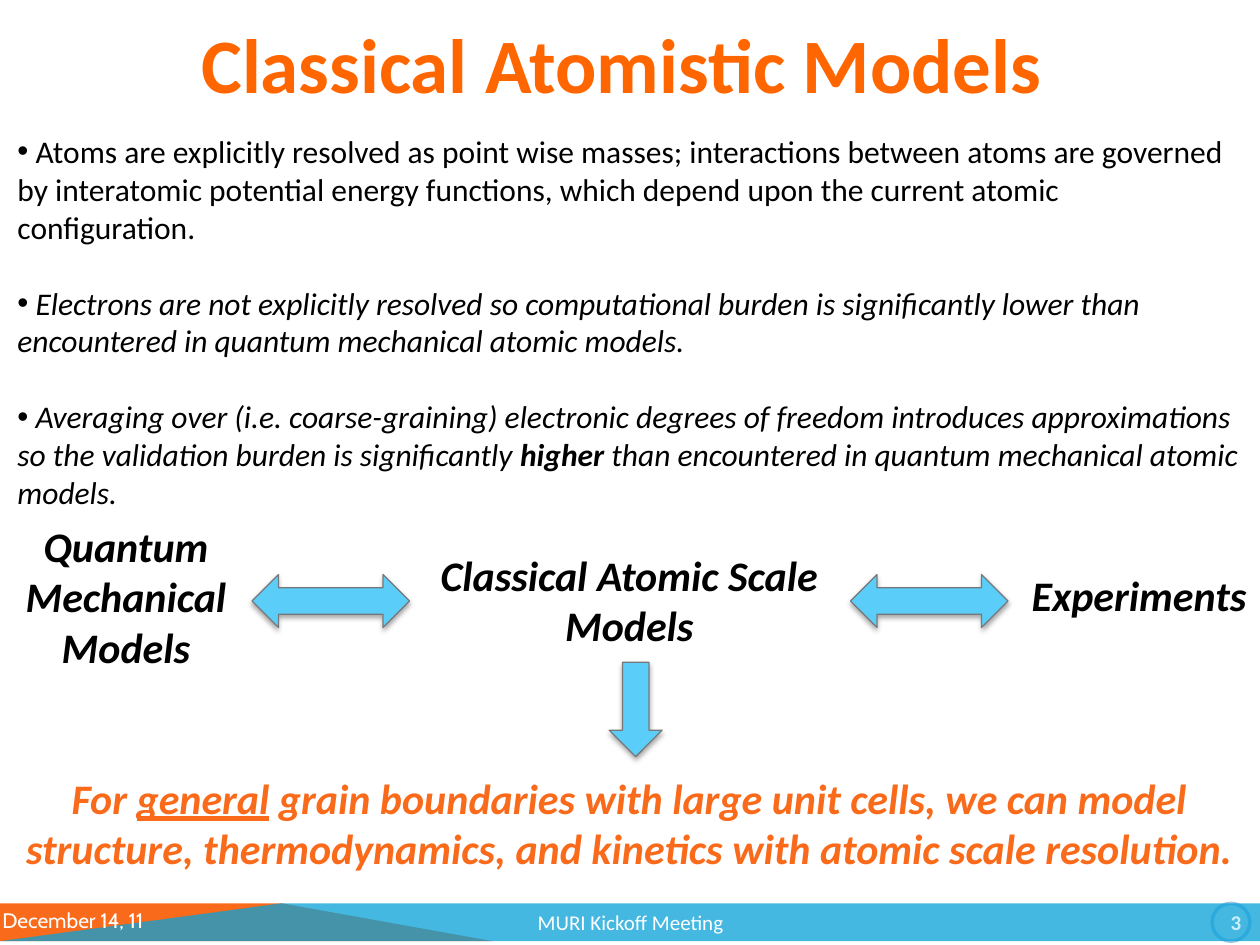
from lxml import etree
from pptx import Presentation
from pptx import util as u
from pptx.dml.color import RGBColor
from pptx.enum import shapes, text
from pptx.oxml import ns

ORANGE, CYAN, SKY, GREY = "F96A1B", "08A1D9", "5ACEF9", "76787B"
WHITE, BLACK = "FFFFFF", "000000"
LEFT, CENTER, RIGHT = (text.PP_ALIGN.LEFT, text.PP_ALIGN.CENTER,
                       text.PP_ALIGN.RIGHT)
LABEL = {"size": u.Pt(24), "bold": True, "italic": True}


def paint(color_format, color, alpha=None):
    """Set a solid fill from a hex string, with opacity in percent."""
    color_format.solid()
    color_format.fore_color.rgb = RGBColor.from_string(color)
    if alpha is not None:
        node = color_format.fore_color._xFill.find(ns.qn("a:srgbClr"))
        etree.SubElement(node, ns.qn("a:alpha"), val=str(alpha * 1000))


def add_shadow(effects, blur, distance, angle, alpha):
    shadow = etree.SubElement(
        effects, ns.qn("a:outerShdw"), blurRad=str(u.Pt(blur)),
        dist=str(u.Pt(distance)), dir=str(angle * 60000), rotWithShape="0")
    color = etree.SubElement(shadow, ns.qn("a:srgbClr"), val=BLACK)
    etree.SubElement(color, ns.qn("a:alpha"), val=str(alpha * 1000))


class Builder:
    def __init__(self, page, font="Calibri"):
        self.page = page
        self.font = font

    def band(self, points, color, alpha=None):
        """Footer polygon through points given in inches."""
        corners = [(u.Inches(x), u.Inches(y)) for x, y in points]
        outline = self.page.shapes.build_freeform(*corners[0])
        outline.add_line_segments(corners[1:], close=True)
        shape = outline.convert_to_shape()
        shape.shadow.inherit = False
        paint(shape.fill, color, alpha)
        shape.line.fill.background()

    def ring(self, place, color, width, alpha):
        shape = self.page.shapes.add_shape(
            shapes.MSO_SHAPE.OVAL, *map(u.Inches, place))
        shape.shadow.inherit = False
        shape.fill.background()
        paint(shape.line.fill, color, alpha)
        shape.line.width = u.Pt(width)

    def arrow(self, kind, place, rotation=0):
        shape = self.page.shapes.add_shape(kind, *map(u.Inches, place))
        shape.rotation = rotation
        shape.shadow.inherit = False
        paint(shape.fill, SKY)
        paint(shape.line.fill, GREY)
        shape.line.width = u.Pt(0.75)
        effects = shape._element.spPr.find(ns.qn("a:effectLst"))
        add_shadow(effects, 3.1, 1.8, 90, 35)

    def words(self, place, paras, style, color=BLACK, align=LEFT,
              anchor=text.MSO_ANCHOR.TOP, wrap=True, bullet=None, gap=0,
              shadow=False):
        """Text box; each para is a list of (wording, extra format) spans."""
        box = self.page.shapes.add_textbox(*map(u.Inches, place))
        frame = box.text_frame
        frame.word_wrap = wrap
        frame.vertical_anchor = anchor
        for index, spans in enumerate(paras):
            para = frame.paragraphs[0] if index == 0 else frame.add_paragraph()
            para.alignment = align
            if bullet:
                props = para._p.get_or_add_pPr()
                etree.SubElement(props, ns.qn("a:buFont"), typeface="Arial")
                etree.SubElement(props, ns.qn("a:buChar"), char=bullet)
            if index and gap:
                para.space_before = u.Pt(gap)
            for wording, extra in spans:
                span = para.add_run()
                span.text = wording
                values = {"name": self.font, **style, **extra}
                for name, value in values.items():
                    setattr(span.font, name, value)
                paint(span.font.fill, color)
                if shadow:
                    effects = etree.Element(ns.qn("a:effectLst"))
                    span._r.rPr.find(ns.qn("a:latin")).addprevious(effects)
                    add_shadow(effects, 4, 3, 45, 50)


def main():
    deck = Presentation()
    deck.slide_width, deck.slide_height = u.Inches(10), u.Inches(7.5)
    page = deck.slides.add_slide(deck.slide_layouts[6])
    build = Builder(page)

    # Footer bands
    top, bottom = 7.17, 7.47
    build.band([(0, bottom), (0, top), (2.24, top), (3.91, bottom)], ORANGE)
    build.ring((9.62, top, 0.3, 0.3), "0070C0", 2, 40)
    build.band([(0, bottom), (2.23, top), (10, top), (10, bottom)], CYAN, 75)

    # Footer texts
    footers = [
        ((-0.08, 7.1, 2.33, 0.4), "December 14, 11", LEFT, WHITE,
         {"name": "Cabin"}),
        ((3.42, 7.12, 3.17, 0.4), "MURI Kickoff Meeting", CENTER, WHITE, {}),
        ((7.62, 7.12, 2.33, 0.4), "3", RIGHT, "C8EFFD", {"bold": True}),
    ]
    for place, wording, align, color, extra in footers:
        build.words(place, [[(wording, extra)]], {"size": u.Pt(12)}, color,
                    align, text.MSO_ANCHOR.MIDDLE)

    # Title
    build.words((1.5, 0.08, 6.94, 0.84), [[("Classical Atomistic Models", {})]],
                {"size": u.Pt(44), "bold": True}, "FF6600", wrap=False)

    # Bullet points
    italic = {"italic": True}
    points = [
        [(" Atoms are explicitly resolved as point wise masses; interactions "
          "between atoms are governed by interatomic potential energy "
          "functions, which depend upon the current atomic configuration.",
          {})],
        [(" Electrons are not explicitly resolved so computational burden is "
          "significantly lower than encountered in quantum mechanical atomic "
          "models.", italic)],
        [(" Averaging over (i.e. coarse-graining) electronic degrees of "
          "freedom introduces approximations so the validation burden is "
          "significantly ", italic),
         ("higher", {"italic": True, "bold": True}),
         (" than encountered in quantum mechanical atomic models.", italic)],
    ]
    build.words((0.04, 1, 9.92, 3.13), points, {"size": u.Pt(18)},
                bullet="•", gap=21.8)

    # Model labels
    labels = [
        ((3.08, 4.31, 3.83, 0.91), "Classical Atomic Scale Models"),
        ((0, 4.08, 2, 1.31), "Quantum Mechanical Models"),
        ((8.08, 4.47, 1.92, 0.5), "Experiments"),
    ]
    for place, wording in labels:
        build.words(place, [[(wording, {})]], LABEL, align=CENTER, shadow=True)

    # Arrows between the labels and down to the conclusion
    for left in (2, 6.75):
        build.arrow(shapes.MSO_SHAPE.LEFT_RIGHT_ARROW, (left, 4.56, 1.25, 0.42))
    build.arrow(shapes.MSO_SHAPE.RIGHT_ARROW, (4.67, 5.42, 0.75, 0.42), 90)

    # Conclusion
    conclusion = [
        ("For ", {}),
        ("general", {"underline": True}),
        (" grain boundaries with large unit cells, we can model structure, "
         "thermodynamics, and kinetics with atomic scale resolution.", {}),
    ]
    build.words((0.08, 6.08, 9.83, 0.91), [conclusion], LABEL, ORANGE, CENTER)

    deck.save("out.pptx")


if __name__ == "__main__":
    main()
